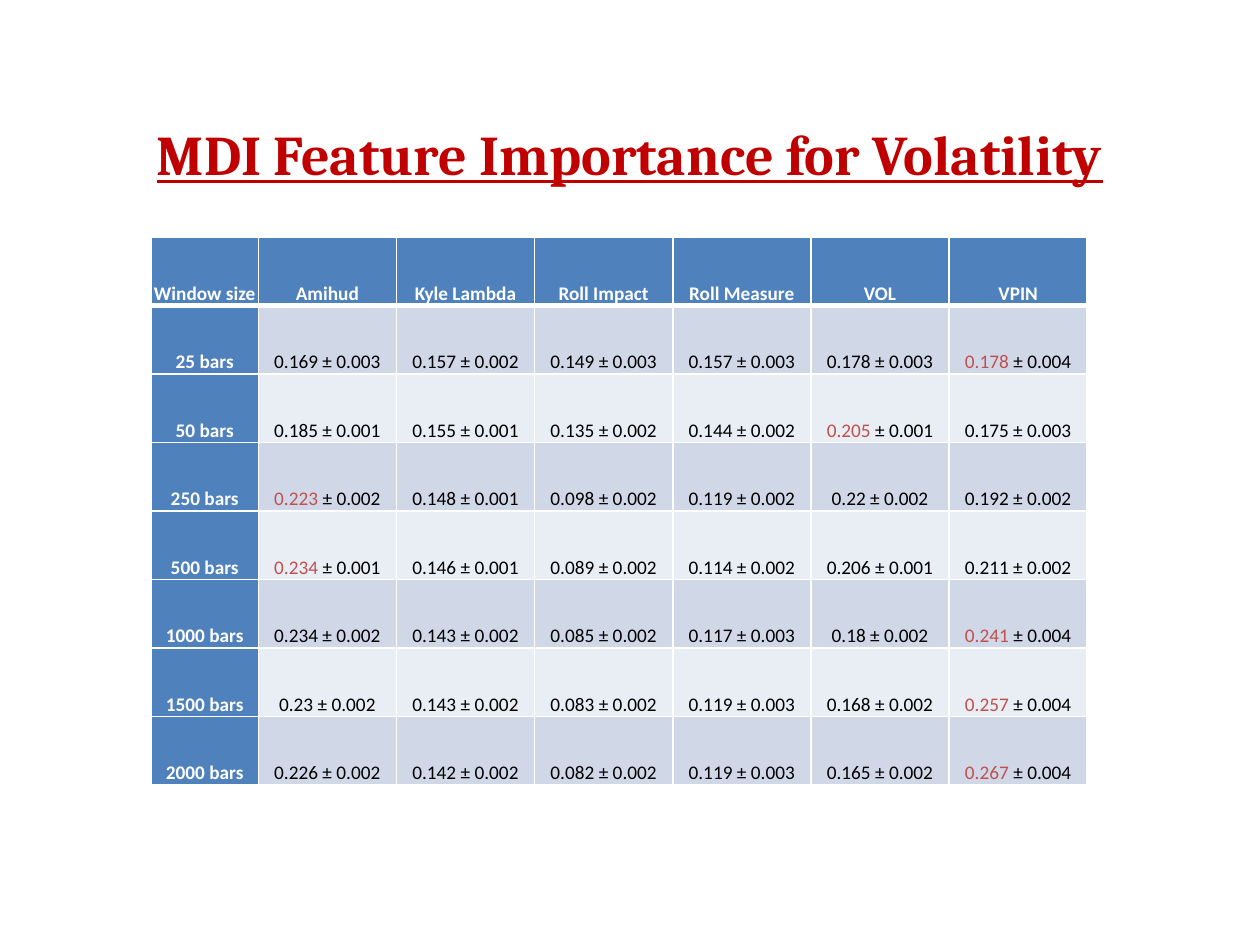
"""Build a slide with a table of MDI feature importance for volatility."""
from lxml.etree import SubElement
from pptx import Presentation
from pptx.dml.color import RGBColor
from pptx.enum.text import MSO_ANCHOR, PP_ALIGN
from pptx.oxml.ns import qn
from pptx.util import Inches, Pt

HEADER_BLUE, BANDS = "4F81BD", ("D0D8E8", "E9EDF4")
WHITE, BLACK, TITLE_RED, BEST_RED = "FFFFFF", "000000", "C00000", "C0504D"
ROWS = """Window size|Amihud|Kyle Lambda|Roll Impact|Roll Measure|VOL|VPIN
25 bars|0.169 ± 0.003|0.157 ± 0.002|0.149 ± 0.003|0.157 ± 0.003|0.178 ± 0.003|0.178 ± 0.004
50 bars|0.185 ± 0.001|0.155 ± 0.001|0.135 ± 0.002|0.144 ± 0.002|0.205 ± 0.001|0.175 ± 0.003
250 bars|0.223 ± 0.002|0.148 ± 0.001|0.098 ± 0.002|0.119 ± 0.002|0.22 ± 0.002|0.192 ± 0.002
500 bars|0.234 ± 0.001|0.146 ± 0.001|0.089 ± 0.002|0.114 ± 0.002|0.206 ± 0.001|0.211 ± 0.002
1000 bars|0.234 ± 0.002|0.143 ± 0.002|0.085 ± 0.002|0.117 ± 0.003|0.18 ± 0.002|0.241 ± 0.004
1500 bars|0.23 ± 0.002|0.143 ± 0.002|0.083 ± 0.002|0.119 ± 0.003|0.168 ± 0.002|0.257 ± 0.004
2000 bars|0.226 ± 0.002|0.142 ± 0.002|0.082 ± 0.002|0.119 ± 0.003|0.165 ± 0.002|0.267 ± 0.004"""
ROWS = [line.split("|") for line in ROWS.splitlines()]


def add_text(paragraph, text, size=11, font="Calibri", color=BLACK, bold=False, underline=False):
    paragraph.alignment = PP_ALIGN.CENTER
    run = paragraph.add_run()
    run.text = text
    run.font.size, run.font.name = Pt(size), font
    run.font.bold, run.font.underline = bold, underline
    run.font.color.rgb = RGBColor.from_string(color)


def add_border(cell, side, width):
    line = SubElement(cell._tc.get_or_add_tcPr(), qn(f"a:ln{side}"), w=str(Pt(width)))
    SubElement(SubElement(line, qn("a:solidFill")), qn("a:srgbClr"), val=WHITE)


presentation = Presentation()
presentation.slide_width, presentation.slide_height = Inches(10), Inches(7.5)
slide = presentation.slides.add_slide(presentation.slide_layouts[6])

title = slide.shapes.add_textbox(Inches(0.5), Inches(0.87), Inches(9), Inches(0.69))
title.text_frame.word_wrap = True
title.text_frame.vertical_anchor = MSO_ANCHOR.MIDDLE
add_text(title.text_frame.paragraphs[0], "MDI Feature Importance for Volatility",
         size=32, font="Cambria", color=TITLE_RED, bold=True, underline=True)

table = slide.shapes.add_table(len(ROWS), len(ROWS[0]), Inches(1.2), Inches(1.88),
                               Inches(7.43), Inches(4.35)).table
table.columns[0].width = Inches(0.85)
for column in list(table.columns)[1:]:
    column.width = Inches(6.58 / 6)

for row, values in enumerate(ROWS):
    if row:
        best = max(range(1, len(values)), key=lambda column: (float(values[column].split()[0]), column))
    for column, text in enumerate(values):
        cell = table.cell(row, column)
        heading = row == 0 or column == 0
        for side in "LRTB":
            add_border(cell, side, 3 if (row, side) in ((0, "B"), (1, "T")) else 1)
        cell.fill.solid()
        cell.fill.fore_color.rgb = RGBColor.from_string(HEADER_BLUE if heading else BANDS[(row - 1) % 2])
        cell.vertical_anchor = MSO_ANCHOR.BOTTOM
        cell.margin_left = cell.margin_right = cell.margin_top = Inches(0.01)
        cell.margin_bottom = 0
        paragraph = cell.text_frame.paragraphs[0]
        paragraph.line_spacing, paragraph.space_after = 1.07, Pt(8)
        if heading:
            add_text(paragraph, text, color=WHITE, bold=True)
        elif column == best:
            mean, deviation = text.split(" ", 1)
            add_text(paragraph, mean, color=BEST_RED)
            add_text(paragraph, f" {deviation}")
        else:
            add_text(paragraph, text)

presentation.save("out.pptx")
